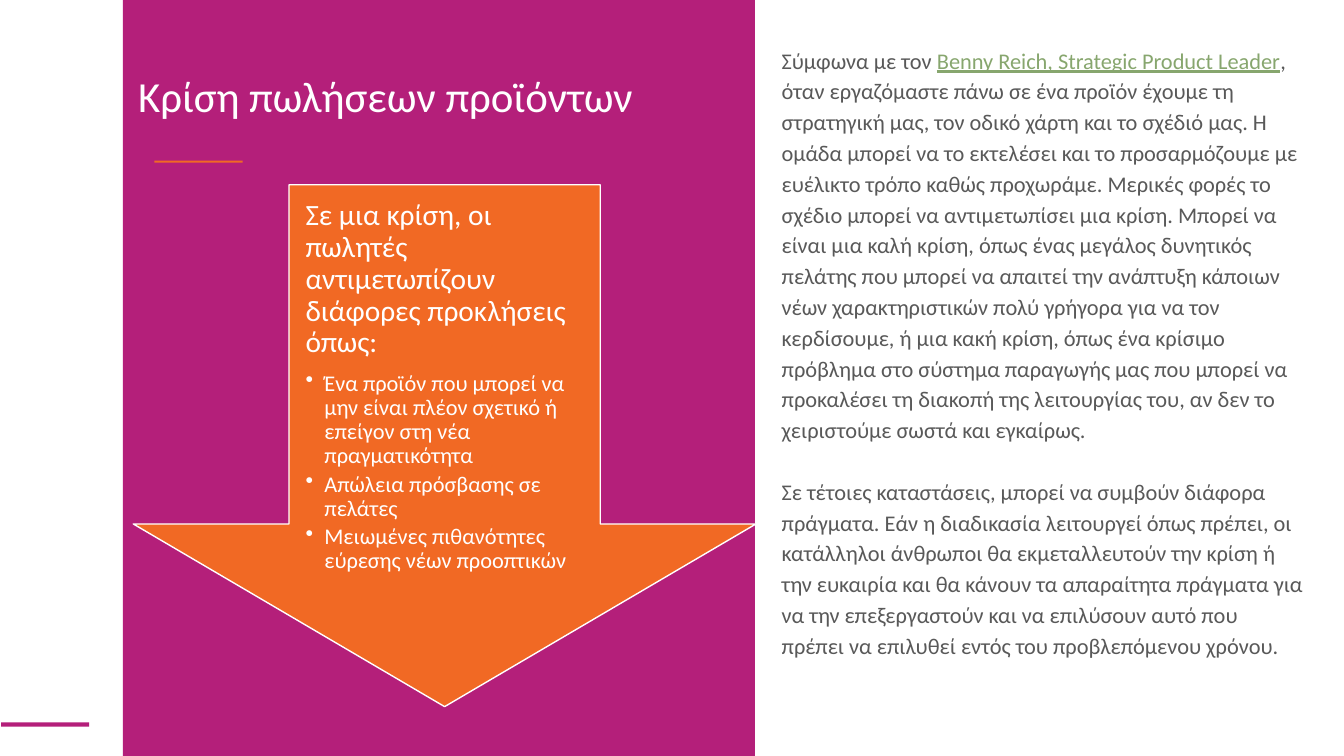
from dataclasses import dataclass

from lxml.etree import SubElement
from pptx import Presentation
from pptx.dml.color import RGBColor as RGB
from pptx.enum.shapes import MSO_SHAPE as SHAPE
from pptx.oxml.ns import qn
from pptx.util import Emu, Pt


@dataclass(frozen=True)
class Theme:
    """Colours, type sizes and font of the slide."""

    magenta: RGB = RGB(0xB4, 0x1F, 0x7A)
    orange: RGB = RGB(0xF1, 0x69, 0x24)
    white: RGB = RGB(0xFF, 0xFF, 0xFF)
    grey: RGB = RGB(0x59, 0x59, 0x59)
    green: RGB = RGB(0x87, 0xA6, 0x6E)
    title: float = 30.6
    lead: int = 21
    body: int = 16
    font: str = "Calibri"


INTRO = "Σύμφωνα με τον "
EXPERT = "Benny Reich, Strategic Product Leader"
PLAN = (
    ", όταν εργαζόμαστε πάνω σε ένα προϊόν έχουμε τη στρατηγική μας, τον οδικό "
    "χάρτη και το σχέδιό μας. Η ομάδα μπορεί να το εκτελέσει και το προσαρμόζουμε "
    "με ευέλικτο τρόπο καθώς προχωράμε. Μερικές φορές το σχέδιο μπορεί να "
    "αντιμετωπίσει μια κρίση. Μπορεί να είναι μια καλή κρίση, όπως ένας μεγάλος "
    "δυνητικός πελάτης που μπορεί να απαιτεί την ανάπτυξη κάποιων νέων "
    "χαρακτηριστικών πολύ γρήγορα για να τον κερδίσουμε, ή μια κακή κρίση, όπως "
    "ένα κρίσιμο πρόβλημα στο σύστημα παραγωγής μας που μπορεί να προκαλέσει τη "
    "διακοπή της λειτουργίας του, αν δεν το χειριστούμε σωστά και εγκαίρως."
)
RESPONSE = (
    "Σε τέτοιες καταστάσεις, μπορεί να συμβούν διάφορα πράγματα. Εάν η διαδικασία "
    "λειτουργεί όπως πρέπει, οι κατάλληλοι άνθρωποι θα εκμεταλλευτούν την κρίση ή "
    "την ευκαιρία και θα κάνουν τα απαραίτητα πράγματα για να την επεξεργαστούν "
    "και να επιλύσουν αυτό που πρέπει να επιλυθεί εντός του προβλεπόμενου χρόνου."
)
LEAD = "Σε μια κρίση, οι πωλητές αντιμετωπίζουν διάφορες προκλήσεις όπως:"
CHALLENGES = (
    "Ένα προϊόν που μπορεί να μην είναι πλέον σχετικό ή επείγον στη νέα πραγματικότητα",
    "Απώλεια πρόσβασης σε πελάτες",
    "Μειωμένες πιθανότητες εύρεσης νέων προοπτικών",
)


class Deck:
    """Draws elements on the current slide in one style."""

    PX = 9525

    def __init__(self, width, height, theme):
        """Open a deck of the given size with one blank slide."""
        self.theme = theme
        self.prs = Presentation()
        self.prs.slide_width, self.prs.slide_height = self.px(width, height)
        self.s = self.prs.slides.add_slide(self.prs.slide_layouts[6])

    def px(self, *lengths):
        """Turn px lengths into EMU."""
        return [Emu(n * self.PX) for n in lengths]

    def shape(self, kind, box, fill, line=None, adjust=()):
        """Add a filled preset shape, outlined if a line colour is given."""
        sp = self.s.shapes.add_shape(kind, *self.px(*box))
        sp.shadow.inherit = False
        sp.fill.solid()
        sp.fill.fore_color.rgb = fill
        if line is None:
            sp.line.fill.background()
        else:
            sp.line.color.rgb = line
            sp.line.width = Pt(1)
        for i, value in enumerate(adjust):
            sp.adjustments[i] = value

    def text(self, box, paragraphs, inset=None):
        """Add a wrapped text box of (runs, format, bulleted) paragraphs."""
        tf = self.s.shapes.add_textbox(*self.px(*box)).text_frame
        tf.word_wrap = True
        if inset is not None:
            for side in ("left", "top", "right", "bottom"):
                setattr(tf, f"margin_{side}", self.px(inset)[0])
        for i, (runs, fmt, bulleted) in enumerate(paragraphs):
            p = tf.add_paragraph() if i else tf.paragraphs[0]
            for name, value in fmt.items():
                setattr(p, name, value)
            if bulleted:
                self.bullet(p)
            for words, size, color, underline in runs:
                r = p.add_run()
                r.text = words
                font = {"name": self.theme.font, "size": Pt(size), "underline": underline}
                for name, value in font.items():
                    setattr(r.font, name, value)
                r.font.color.rgb = color

    def bullet(self, p):
        """Give a paragraph a round bullet and a hanging indent."""
        indent = self.px(18)[0]
        pPr = p._p.get_or_add_pPr()
        pPr.set("marL", str(indent))
        pPr.set("indent", str(-indent))
        SubElement(pPr, qn("a:buChar"), char="•")

    def save(self):
        """Write the deck."""
        self.prs.save("out.pptx")


def main():
    """Build the slide on product sales crises."""
    t = Theme()
    deck = Deck(1280, 720, t)
    deck.shape(SHAPE.RECTANGLE, (117, 0, 602, 720), t.magenta)
    deck.shape(SHAPE.RECTANGLE, (1, 688, 84, 4), t.magenta)
    title = [("Κρίση πωλήσεων προϊόντων", t.title, t.white, False)]
    deck.text((122, 71, 517, 61), [(title, {"line_spacing": 0.8}, False)])

    story = [
        (INTRO, t.body, t.grey, False),
        (EXPERT, t.body, t.green, True),
        (PLAN, t.body, t.grey, False),
    ]
    response = [(RESPONSE, t.body, t.grey, False)]
    leading = {"line_spacing": Pt(22)}
    deck.text((735, 36, 517, 600), [
        (story, leading, False),
        (response, {**leading, "space_before": Pt(22)}, False),
    ])

    deck.shape(SHAPE.RECTANGLE, (147, 153, 84, 2), t.orange)
    deck.shape(SHAPE.DOWN_ARROW, (127, 176, 593, 497), t.orange, t.white, (0.5, 0.35))
    lead = [(LEAD, t.lead, t.white, False)]
    tight = {"line_spacing": 0.9}
    challenges = [
        ([(words, t.body, t.white, False)], {**tight, "space_after": Pt(3)}, True)
        for words in CHALLENGES
    ]
    deck.text((276, 176, 297, 411), [
        (lead, {**tight, "space_after": Pt(9)}, False), *challenges,
    ], inset=15)
    deck.save()


if __name__ == "__main__":
    main()
